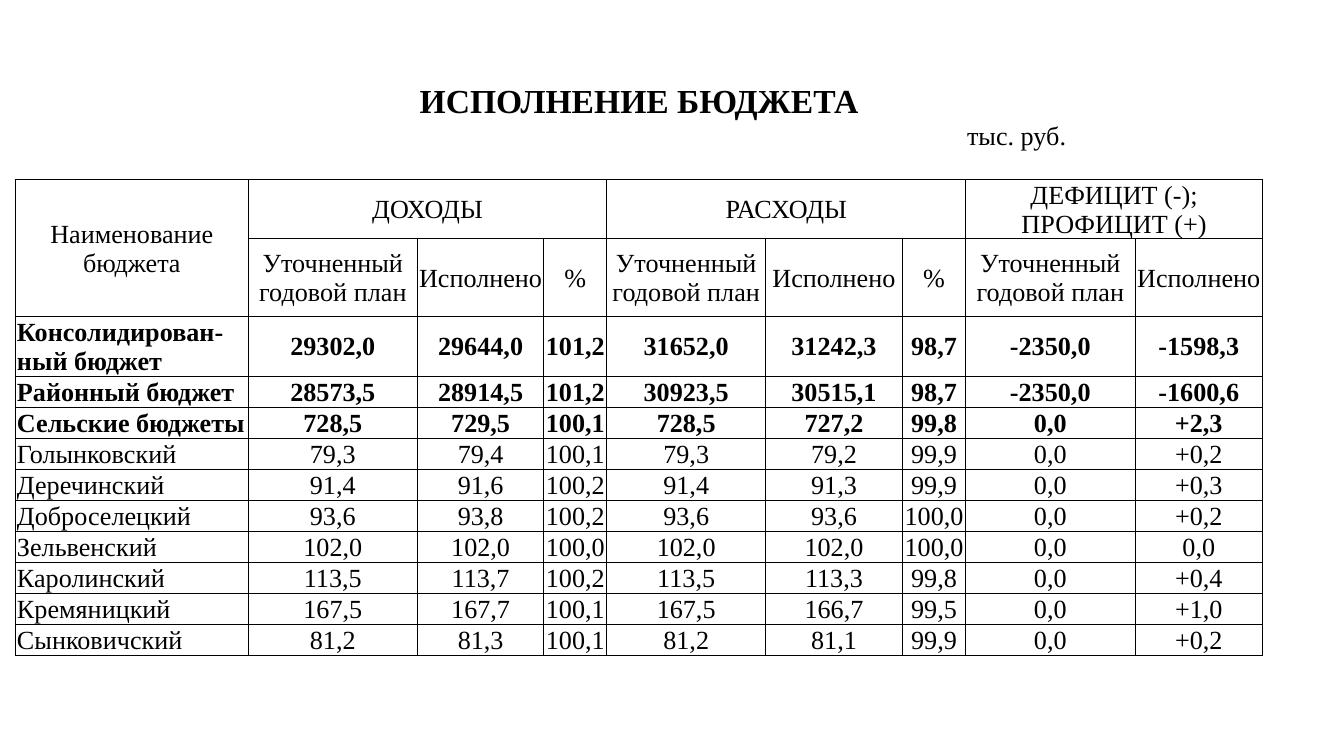
"""Build a one-slide budget execution table."""
from lxml.etree import SubElement
from pptx import Presentation
from pptx.dml.color import RGBColor
from pptx.enum.text import MSO_ANCHOR as Anchor, PP_ALIGN as Align
from pptx.oxml.ns import qn
from pptx.util import Pt

BLACK = RGBColor(0, 0, 0)
FONT = "Times New Roman"
COLUMN_WIDTHS = [124.6, 72.7, 18, 46.8, 20.9, 33.8, 85, 15.1, 58.3, 6.5, 27.4, 90.7, 37.4, 31]
ROW_HEIGHTS = [20.4, 31.7, 31.1, 41.8, 31.6] + [16.65] * 9
FIELDS = [(0, 1), (1, 2), (3, 2), (5, 1), (6, 1), (7, 2), (9, 2), (11, 1), (12, 2)]
PLAN, DONE = "Уточненный годовой план", "Исполнено"
SUBHEADS = [PLAN, DONE, "%", PLAN, DONE, "%", PLAN, DONE]
BUDGETS = [
    ("Консолидирован-ный бюджет", "29302,0", "29644,0", "101,2", "31652,0", "31242,3", "98,7", "-2350,0", "-1598,3"),
    ("Районный бюджет", "28573,5", "28914,5", "101,2", "30923,5", "30515,1", "98,7", "-2350,0", "-1600,6"),
    ("Сельские бюджеты", "728,5", "729,5", "100,1", "728,5", "727,2", "99,8", "0,0", "+2,3"),
    ("Голынковский", "79,3", "79,4", "100,1", "79,3", "79,2", "99,9", "0,0", "+0,2"),
    ("Деречинский", "91,4", "91,6", "100,2", "91,4", "91,3", "99,9", "0,0", "+0,3"),
    ("Доброселецкий", "93,6", "93,8", "100,2", "93,6", "93,6", "100,0", "0,0", "+0,2"),
    ("Зельвенский", "102,0", "102,0", "100,0", "102,0", "102,0", "100,0", "0,0", "0,0"),
    ("Каролинский", "113,5", "113,7", "100,2", "113,5", "113,3", "99,8", "0,0", "+0,4"),
    ("Кремяницкий", "167,5", "167,7", "100,1", "167,5", "166,7", "99,5", "0,0", "+1,0"),
    ("Сынковичский", "81,2", "81,3", "100,1", "81,2", "81,1", "99,9", "0,0", "+0,2"),
]


def set_borders(cell, visible):
    properties = cell._tc.get_or_add_tcPr()
    for side in ("L", "R", "T", "B"):
        line = SubElement(properties, qn(f"a:ln{side}"), w=str(Pt(0.5)))
        if side in visible:
            fill = SubElement(line, qn("a:solidFill"))
            SubElement(fill, qn("a:srgbClr"), val=str(BLACK))
        else:
            SubElement(line, qn("a:noFill"))


def write_cell(row, column, text, columns=1, rows=1, size=14, bold=False,
               align=Align.CENTER, anchor=Anchor.MIDDLE):
    cell = table.cell(row, column)
    if columns * rows > 1:
        cell.merge(table.cell(row + rows - 1, column + columns - 1))
    cell.vertical_anchor = anchor
    cell.text_frame.text = text
    for para in cell.text_frame.paragraphs:
        para.alignment = align
        for span in para.runs:
            span.font.name = FONT
            span.font.size = Pt(size)
            span.font.bold = bold
            span.font.color.rgb = BLACK


deck = Presentation()
deck.slide_width, deck.slide_height = Pt(720), Pt(405)
page = deck.slides.add_slide(deck.slide_layouts[6])

frame = page.shapes.add_table(len(ROW_HEIGHTS), len(COLUMN_WIDTHS), Pt(8.4), Pt(43.9),
                              Pt(sum(COLUMN_WIDTHS)), Pt(sum(ROW_HEIGHTS)))
table = frame.table
table.first_row = False
table.horz_banding = False
for column, width in zip(table.columns, COLUMN_WIDTHS):
    column.width = Pt(width)
for index, (row, height) in enumerate(zip(table.rows, ROW_HEIGHTS)):
    row.height = Pt(height)
    for cell in row.cells:
        set_borders(cell, ("", "B")[index] if index < 2 else "LRTB")
        cell.fill.background()
        cell.margin_left = cell.margin_right = cell.margin_top = Pt(0.72)
        cell.margin_bottom = Pt(0)

write_cell(0, 0, "ИСПОЛНЕНИЕ БЮДЖЕТА", columns=14, size=18, bold=True)
for start in (2, 4, 6, 8):
    table.cell(1, start).merge(table.cell(1, start + 1))
write_cell(1, 11, "тыс. руб.", columns=2, align=Align.LEFT, anchor=Anchor.TOP)

write_cell(2, 0, "Наименование\nбюджета", rows=2)
write_cell(2, 1, "ДОХОДЫ", columns=5)
write_cell(2, 6, "РАСХОДЫ", columns=5)
write_cell(2, 11, "ДЕФИЦИТ (-); ПРОФИЦИТ (+)", columns=3)
for (start, width), label in zip(FIELDS[1:], SUBHEADS):
    write_cell(3, start, label, columns=width)

for row, (name, *values) in enumerate(BUDGETS, 4):
    bold = row < 7
    write_cell(row, 0, name, bold=bold, align=Align.LEFT, anchor=Anchor.BOTTOM)
    for (start, width), value in zip(FIELDS[1:], values):
        write_cell(row, start, value, columns=width, bold=bold)

deck.save("out.pptx")
